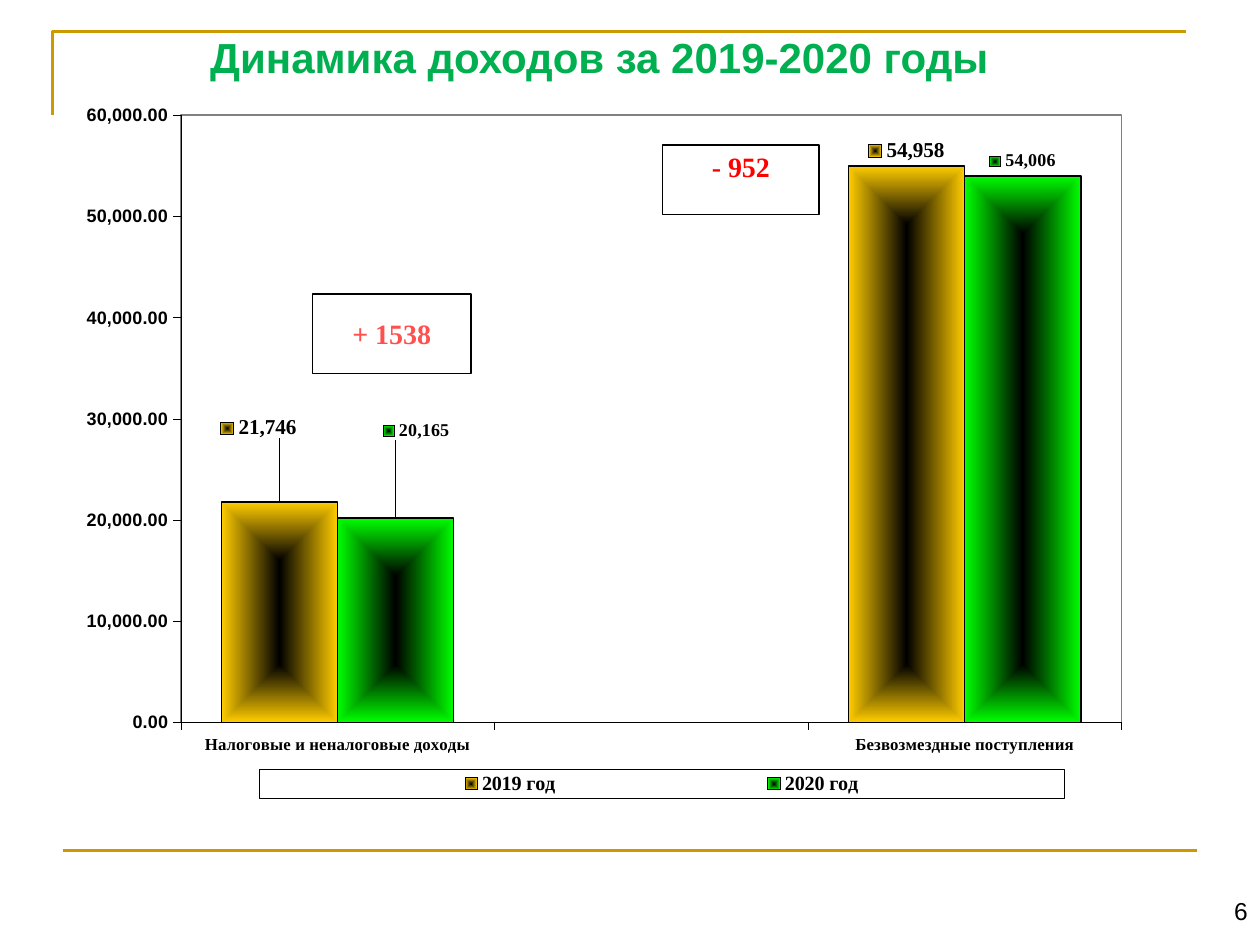
import pptx
import pptx.chart.data
import pptx.dml.color
import pptx.enum.chart
import pptx.enum.shapes
import pptx.enum.text
import pptx.oxml
import pptx.oxml.ns
import pptx.util

Pt = pptx.util.Pt
COLORS = {
    "gold": "CC9900", "title": "00B050", "black": "000000", "white": "FFFFFF",
    "gray": "808080", "growth": "FF5050", "decline": "FF0000",
    "2019": "FFCC00", "2020": "00FF00",
}
SANS, SERIF = "Arial", "Times New Roman"
ALIGN = pptx.enum.text.PP_ALIGN
ANCHOR = pptx.enum.text.MSO_ANCHOR


def rgb(color):
    """Return the named colour."""
    return pptx.dml.color.RGBColor.from_string(COLORS[color])


def style_font(font, size, face, color="black", bold=False):
    """Set size, face, colour and weight of a font."""
    font.size, font.name, font.bold = Pt(size), face, bold
    font.color.rgb = rgb(color)


def write(frame, text, size=16, face=SERIF, color="black", bold=False,
          align=ALIGN.CENTER, anchor=ANCHOR.TOP, spacing=1.0, wrap=True, top=3.6):
    """Put one formatted paragraph into a text frame."""
    frame.word_wrap, frame.vertical_anchor = wrap, anchor
    frame.margin_top = Pt(top)
    paragraph = frame.paragraphs[0]
    paragraph.alignment, paragraph.line_spacing = align, spacing
    run = paragraph.add_run()
    run.text = text
    style_font(run.font, size, face, color, bold)


def chart_xml(body):
    """Parse a chart XML fragment."""
    tag, rest = body.split(">", 1)
    return pptx.oxml.parse_xml(f"{tag} {pptx.oxml.ns.nsdecls('c', 'a')}>{rest}")


def place(parent, index, target="", **fractions):
    """Give a chart part a manual layout in fractions of the chart."""
    for old in parent.findall(pptx.oxml.ns.qn("c:layout")):
        parent.remove(old)
    modes = "".join(f'<c:{axis}Mode val="edge"/>' for axis in "xy") if "w" in fractions else ""
    values = "".join(f'<c:{key} val="{value}"/>' for key, value in fractions.items())
    parent.insert(index, chart_xml(
        f"<c:layout><c:manualLayout>{target}{modes}{values}</c:manualLayout></c:layout>"))


def outline(color, width):
    """Return chart shape properties with a line and no fill."""
    return chart_xml(
        f'<c:spPr><a:noFill/><a:ln w="{Pt(width)}"><a:solidFill>'
        f'<a:srgbClr val="{COLORS[color]}"/></a:solidFill></a:ln></c:spPr>')


def fill_from_center(bar_series, color):
    """Fill bars with a rectangular gradient from black to a colour."""
    bar_series.format.fill.solid()
    solid = bar_series._element.spPr.find(pptx.oxml.ns.qn("a:solidFill"))
    stops = "".join(f'<a:gs pos="{pos}"><a:srgbClr val="{COLORS[name]}"/></a:gs>'
                    for pos, name in ((0, "black"), (100000, color)))
    solid.getparent().replace(solid, chart_xml(
        f'<a:gradFill><a:gsLst>{stops}</a:gsLst><a:path path="rect">'
        '<a:fillToRect l="50000" t="50000" r="50000" b="50000"/></a:path></a:gradFill>'))


class SlideBuilder:
    """Holds the line style and the current slide."""

    def __init__(self, slide, accent="gold", accent_width=1.5):
        self.shapes = slide.shapes
        self.accent, self.accent_width = accent, accent_width

    def accent_line(self, line):
        line.color.rgb = rgb(self.accent)
        line.width = Pt(self.accent_width)

    def corner(self, *points):
        start, *rest = [(Pt(x), Pt(y)) for x, y in points]
        builder = self.shapes.build_freeform(*start)
        builder.add_line_segments(rest, close=False)
        frame_corner = builder.convert_to_shape()
        frame_corner.shadow.inherit = False
        frame_corner.fill.background()
        self.accent_line(frame_corner.line)

    def rule(self, *ends):
        rule = self.shapes.add_connector(
            pptx.enum.shapes.MSO_CONNECTOR.STRAIGHT, *map(Pt, ends))
        self.accent_line(rule.line)
        rule._element.spPr.append(chart_xml("<a:effectLst></a:effectLst>"))

    def text(self, box, text, **style):
        write(self.shapes.add_textbox(*map(Pt, box)).text_frame, text, **style)

    def change_box(self, box, text, **style):
        change = self.shapes.add_shape(
            pptx.enum.shapes.MSO_SHAPE.RECTANGLE, *map(Pt, box))
        change.shadow.inherit = False
        change.fill.solid()
        change.fill.fore_color.rgb = rgb("white")
        change.line.color.rgb = rgb("black")
        change.line.width = Pt(0.75)
        write(change.text_frame, text, bold=True, wrap=False, **style)

    def columns(self, box, categories, incomes, label_styles):
        data = pptx.chart.data.CategoryChartData(number_format="#,##0")
        data.categories = categories
        for year, values in incomes.items():
            data.add_series(f"{year} год", values)
        chart = self.shapes.add_chart(
            pptx.enum.chart.XL_CHART_TYPE.COLUMN_CLUSTERED, *map(Pt, box), data).chart
        chart.has_title = False
        style_font(chart.font, 7.2, SANS)
        self.axes(chart)
        self.legend(chart)
        plot = chart.plots[0]
        plot.gap_width, plot.overlap, plot.vary_by_categories = 70, 0, False
        for bars, year in zip(plot.series, incomes):
            fill_from_center(bars, year)
            bars.format.line.color.rgb = rgb("black")
            bars.format.line.width = Pt(0.89)
            self.labels(bars, **label_styles[year])
        plot_area = chart._chartSpace.chart.plotArea
        place(plot_area, 0, '<c:layoutTarget val="inner"/>', x=0.095, y=0.018, w=0.904, h=0.831)
        plot_area.append(outline("gray", 0.89))

    def axes(self, chart):
        amounts = chart.value_axis
        amounts.minimum_scale, amounts.maximum_scale = 0, 60000
        amounts.major_unit = 10000
        amounts.has_major_gridlines = False
        amounts.tick_labels.number_format = "#,##0.00"
        amounts.tick_labels.number_format_is_linked = False
        for axis, size, face in ((chart.category_axis, 9.6, SERIF), (amounts, 10.3, SANS)):
            axis.major_tick_mark = pptx.enum.chart.XL_TICK_MARK.OUTSIDE
            style_font(axis.tick_labels.font, size, face, bold=True)
            axis.format.line.color.rgb = rgb("black")
            axis.format.line.width = Pt(0.22)

    def legend(self, chart):
        chart.has_legend = True
        years = chart.legend
        years.position = pptx.enum.chart.XL_LEGEND_POSITION.RIGHT
        years.include_in_layout = False
        style_font(years.font, 11.5, SERIF, bold=True)
        place(years._element, 1, x=0.17, y=0.913, w=0.774, h=0.04)
        years._element.find(pptx.oxml.ns.qn("c:txPr")).addprevious(outline("black", 0.22))

    def labels(self, bars, size, shift):
        outside = pptx.enum.chart.XL_LABEL_POSITION.OUTSIDE_END
        amounts = bars.data_labels
        amounts.show_value = amounts.show_legend_key = True
        amounts.number_format, amounts.number_format_is_linked = "#,##0", False
        amounts.position = outside
        style_font(amounts.font, size, SERIF, bold=True)
        shifted = bars.points[0].data_label
        shifted.position = outside
        style_font(shifted.font, size, SERIF, bold=True)
        label = amounts._element.find(pptx.oxml.ns.qn("c:dLbl"))
        label.find(pptx.oxml.ns.qn("c:showLegendKey")).set("val", "1")
        place(label, 1, x=shift[0], y=shift[1])


def main():
    """Build and save the income slide."""
    deck = pptx.Presentation()
    deck.slide_width, deck.slide_height = Pt(720), Pt(540)
    page = SlideBuilder(deck.slides.add_slide(deck.slide_layouts[6]))
    page.corner((30, 66), (30, 18), (678, 18))
    page.rule(36, 486, 684, 486)
    page.text((25, 20, 635, 40), "Динамика доходов за 2019-2020 годы",
              size=24, face=SANS, color="title", bold=True, spacing=0.8)
    page.text((677.5, 508.5, 42.5, 31.5), "6", size=14, face=SANS, align=ALIGN.RIGHT)
    page.columns(
        (46.8, 58.3, 594.7, 417.6),
        ["Налоговые и неналоговые доходы", "", "Безвозмездные поступления"],
        {"2019": (21746, None, 54958), "2020": (20165, None, 54006)},
        {"2019": {"size": 12.1, "shift": (-0.02, -0.08)},
         "2020": {"size": 10.3, "shift": (0.02, -0.1)}})
    page.change_box((178.5, 168, 90.7, 45.4), "+ 1538", color="growth", anchor=ANCHOR.MIDDLE)
    page.change_box((378.7, 82.8, 89.3, 39.6), "- 952", color="decline", top=2.5)
    deck.save("out.pptx")


if __name__ == "__main__":
    main()
